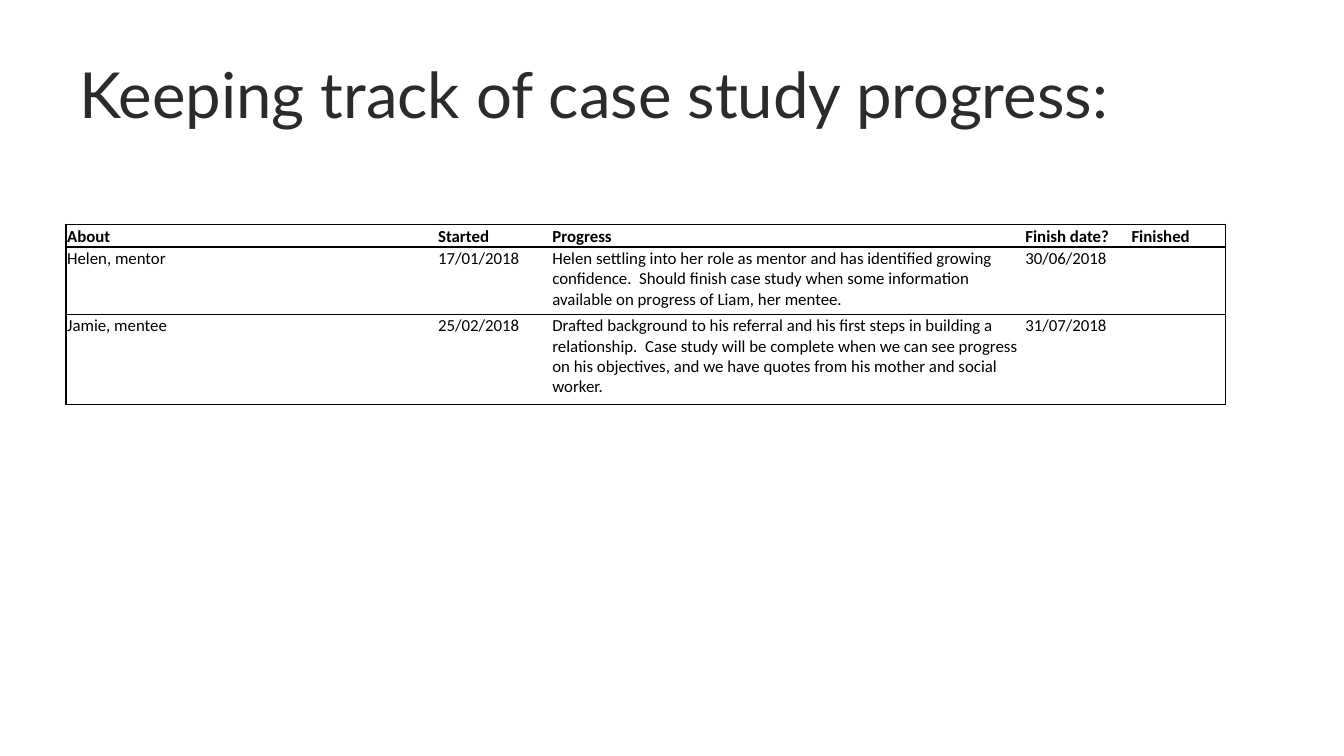
from lxml import etree
from pptx import Presentation
from pptx import util as u
from pptx.dml.color import RGBColor
from pptx.enum import text
from pptx.oxml import ns

COLORS = {"title": "2B2B2B", "ink": "000000"}
COLUMN_WIDTHS = [2.76, 0.85, 3.52, 0.79, 0.71]
ROW_HEIGHTS = [0.17, 0.5, 0.67]
RULES = [1, 1, 0.5, 1]  # horizontal lines from top to bottom, in points
CASES = [
    ["About", "Started", "Progress", "Finish date?", "Finished"],
    ["Helen, mentor", "17/01/2018",
     "Helen settling into her role as mentor and has identified growing "
     "confidence.  Should finish case study when some information "
     "available on progress of Liam, her mentee.",
     "30/06/2018", ""],
    ["Jamie, mentee", "25/02/2018",
     "Drafted background to his referral and his first steps in building a "
     "relationship.  Case study will be complete when we can see progress "
     "on his objectives, and we have quotes from his mother and social worker.",
     "31/07/2018", ""],
]


def style_text(frame, font, size, color, bold=False):
    for para in frame.paragraphs:
        for span in para.runs:
            span.font.name = font
            span.font.size = u.Pt(size)
            span.font.bold = bold
            span.font.color.rgb = RGBColor.from_string(COLORS[color])


def set_borders(cell, left, right, top, bottom):
    """Draw each cell edge at its width in points; 0 hides it."""
    properties = cell._tc.get_or_add_tcPr()
    edges = {"lnL": left, "lnR": right, "lnT": top, "lnB": bottom}
    for index, (tag, width) in enumerate(edges.items()):
        line = etree.Element(ns.qn(f"a:{tag}"), w=str(u.Pt(width)))
        properties.insert(index, line)
        if width:
            fill = etree.SubElement(line, ns.qn("a:solidFill"))
            etree.SubElement(fill, ns.qn("a:srgbClr"), val=COLORS["ink"])
        else:
            etree.SubElement(line, ns.qn("a:noFill"))


def add_title(page, left, top, width, height):
    box = page.shapes.add_textbox(*map(u.Inches, (left, top, width, height)))
    frame = box.text_frame
    frame.word_wrap = True
    frame.text = "Keeping track of case study progress:"
    style_text(frame, "Lato", 34, "title")


def add_case_table(page, left, top):
    size = (sum(COLUMN_WIDTHS), sum(ROW_HEIGHTS))
    table = page.shapes.add_table(
        len(CASES), len(COLUMN_WIDTHS), *map(u.Inches, (left, top, *size))).table
    table.horz_banding = False
    for column, width in zip(table.columns, COLUMN_WIDTHS):
        column.width = u.Inches(width)

    last = len(COLUMN_WIDTHS) - 1
    for r, (row, height) in enumerate(zip(table.rows, ROW_HEIGHTS)):
        row.height = u.Inches(height)
        header = r == 0
        for c, cell in enumerate(row.cells):
            cell.fill.background()
            cell.margin_left = cell.margin_right = cell.margin_top = u.Inches(0.01)
            cell.margin_bottom = 0
            cell.vertical_anchor = (
                text.MSO_ANCHOR.BOTTOM if header else text.MSO_ANCHOR.TOP)
            cell.text_frame.text = CASES[r][c]
            style_text(cell.text_frame, "Calibri", 9, "ink", bold=header)
            set_borders(cell, int(c == 0), int(c == last), RULES[r], RULES[r + 1])


def main():
    deck = Presentation()
    # Widescreen page, 16:9
    deck.slide_width = u.Inches(10)
    deck.slide_height = deck.slide_width * 9 // 16
    page = deck.slides.add_slide(deck.slide_layouts[6])
    add_title(page, 0.49, 0.36, 9.32, 1.41)
    add_case_table(page, 0.49, 1.67)
    deck.save("out.pptx")


if __name__ == "__main__":
    main()
